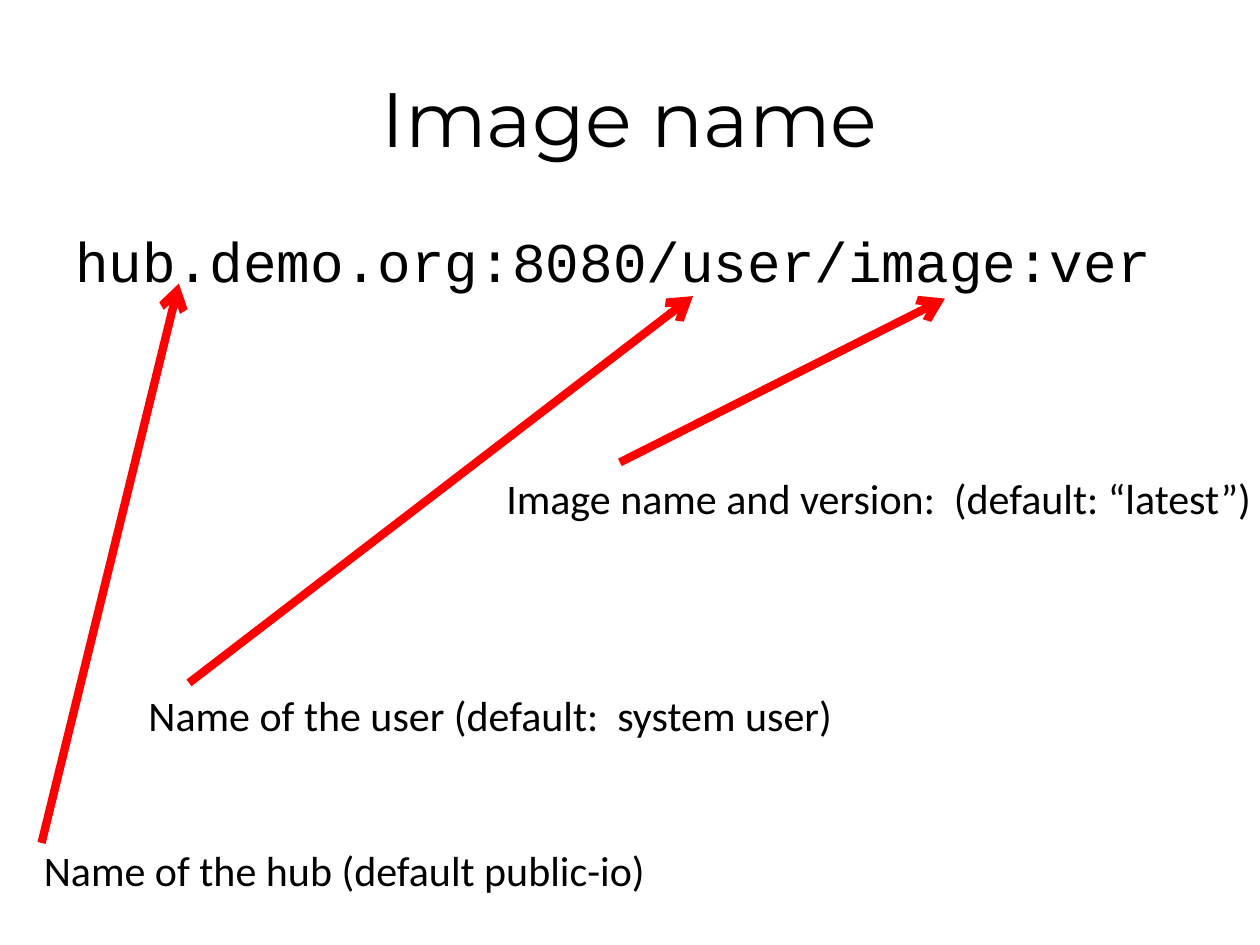
from lxml import etree
from pptx import Presentation
from pptx.dml.color import RGBColor
from pptx.enum import shapes, text
from pptx.oxml import ns
from pptx.util import Inches, Pt

BLACK = RGBColor(0x00, 0x00, 0x00)
RED = RGBColor(0xFF, 0x00, 0x00)

LABEL_WIDTH, LABEL_HEIGHT = 8.46, 0.5
CALLOUTS = [
    ("Name of the hub (default public-io)", (0.25, 6.65), (0.33, 6.69), (1.42, 2.25)),
    ("Name of the user (default:  system user)", (1.08, 5.42), (1.5, 5.42), (5.5, 2.35)),
    ("Image name and version:  (default: “latest”)", (3.92, 3.7), (4.92, 3.67), (7.5, 2.37)),
]


def add_text(page, bounds, words, font, size):
    box = page.shapes.add_textbox(*map(Inches, bounds))
    box.text_frame.word_wrap = True
    para = box.text_frame.paragraphs[0]
    para.text = words
    para.font.name = font
    para.font.size = Pt(size)
    para.font.color.rgb = BLACK
    return box


def add_title(page, bounds):
    box = add_text(page, bounds, "Image name", "Montserrat", 44)
    box.text_frame.vertical_anchor = text.MSO_ANCHOR.MIDDLE
    box.text_frame.paragraphs[0].alignment = text.PP_ALIGN.CENTER


def add_address(page, bounds):
    box = add_text(page, bounds, "hub.demo.org:8080/user/image:ver", "Courier New", 32)
    box.text_frame.paragraphs[0].space_before = Pt(6.4)


def add_arrow(page, start, end):
    arrow = page.shapes.add_connector(
        shapes.MSO_CONNECTOR.STRAIGHT, *map(Inches, start + end)
    )
    arrow.line.color.rgb = RED
    arrow.line.width = Pt(4.75)
    etree.SubElement(arrow.line._get_or_add_ln(), ns.qn("a:tailEnd"), type="arrow")
    etree.SubElement(arrow._element.spPr, ns.qn("a:effectLst"))


def add_callout(page, words, corner, start, end):
    add_arrow(page, start, end)
    add_text(page, corner + (LABEL_WIDTH, LABEL_HEIGHT), words, "Calibri", 24)


def main():
    deck = Presentation()
    deck.slide_width, deck.slide_height = Inches(10), Inches(7.5)
    page = deck.slides.add_slide(deck.slide_layouts[6])
    add_title(page, (0.5, 0.3, 9, 1.25))
    add_address(page, (0.5, 1.75, 9, 4.95))
    for callout in CALLOUTS:
        add_callout(page, *callout)
    deck.save("out.pptx")


if __name__ == "__main__":
    main()
